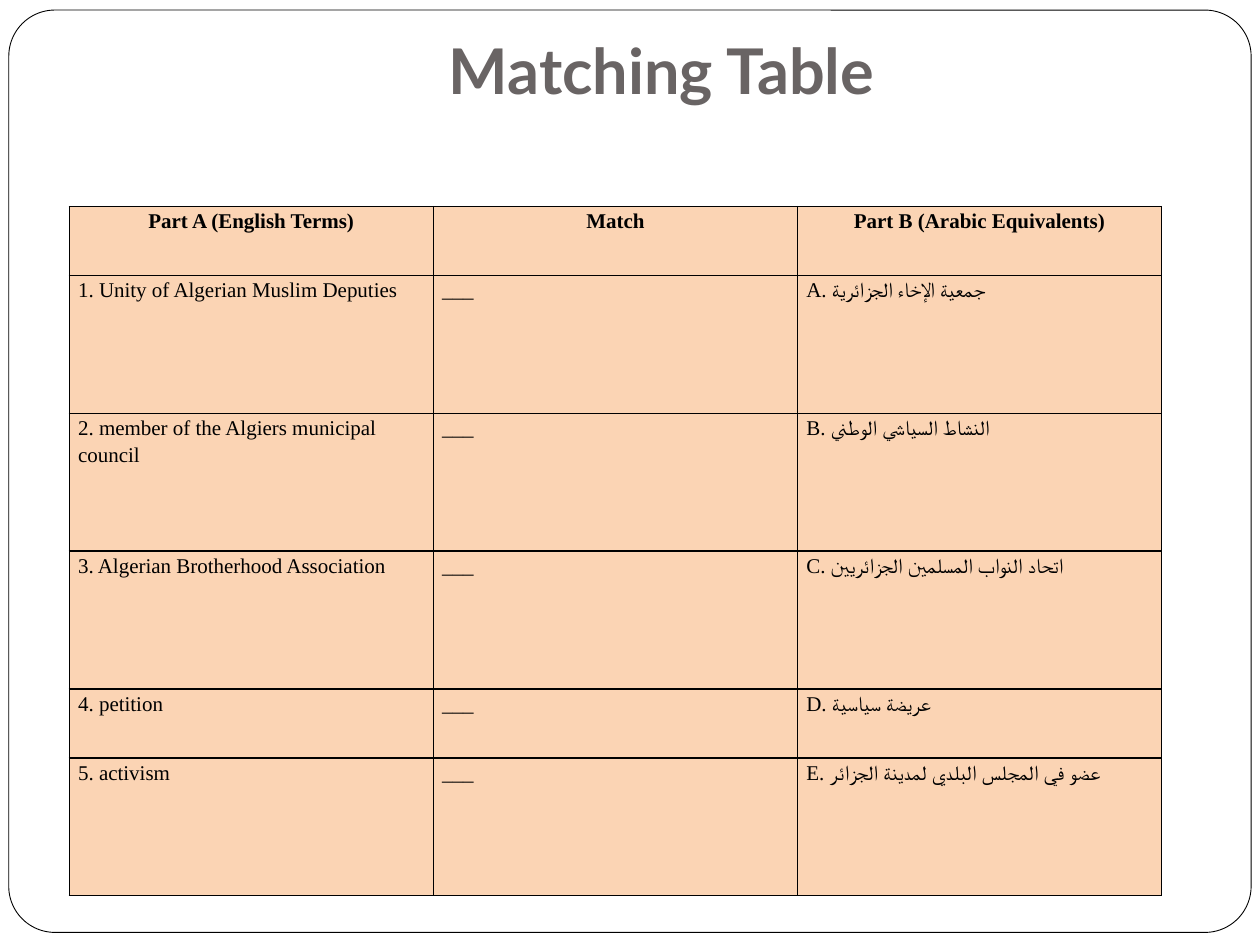
from dataclasses import dataclass

import pptx
import pptx.dml.color
import pptx.enum.shapes
import pptx.enum.text
import pptx.oxml
import pptx.oxml.ns
import pptx.util

RGBColor = pptx.dml.color.RGBColor
PP_ALIGN = pptx.enum.text.PP_ALIGN

BLACK = RGBColor(0x00, 0x00, 0x00)
WHITE = RGBColor(0xFF, 0xFF, 0xFF)
TITLE_GRAY = RGBColor(0x69, 0x64, 0x64)
PEACH = RGBColor(0xFB, 0xD4, 0xB4)

COLUMNS, ROWS = 100, 75
BLANK = "___"
HEADERS = ("Part A (English Terms)", "Match", "Part B (Arabic Equivalents)")


@dataclass(frozen=True)
class Box:
    """A place on the slide, in grid columns and rows."""
    left: float
    top: float
    width: float
    height: float


@dataclass(frozen=True)
class Pair:
    """One table row; units is its height in shares of the table."""
    english: str
    arabic: str
    units: int


FRAME = Box(0.7, 0.8, 98.6, 73.2)
TITLE = Box(10, 3, 85, 12.5)
TABLE = Box(5.5, 16.4, 86.7, 54.7)
HEADER_UNITS = 1
PAIRS = (
    Pair("1. Unity of Algerian Muslim Deputies", "A. جمعية الإخاء الجزائرية", 2),
    Pair("2. member of the Algiers municipal council", "B. النشاط السياسي الوطني", 2),
    Pair("3. Algerian Brotherhood Association", "C. اتحاد النواب المسلمين الجزائريين", 2),
    Pair("4. petition", "D. عريضة سياسية", 1),
    Pair("5. activism", "E. عضو في المجلس البلدي لمدينة الجزائر", 2),
)

prs = pptx.Presentation()
prs.slide_width = pptx.util.Inches(10)
prs.slide_height = pptx.util.Inches(7.5)


def place(box: Box) -> tuple[int, int, int, int]:
    """Turn grid units into left, top, width and height."""
    col, row = prs.slide_width / COLUMNS, prs.slide_height / ROWS
    return (round(box.left * col), round(box.top * row),
            round(box.width * col), round(box.height * row))


def add_run(p, text: str, font: str, size: float, color: RGBColor, bold: bool) -> None:
    r = p.add_run()
    r.text = text
    r.font.name = font
    r.font.size = pptx.util.Pt(size)
    r.font.bold = bold
    r.font.color.rgb = color


def add_frame(s) -> None:
    sp = s.shapes.add_shape(
        pptx.enum.shapes.MSO_SHAPE.ROUNDED_RECTANGLE, *place(FRAME))
    sp.adjustments[0] = 0.05
    sp.shadow.inherit = False
    sp.fill.solid()
    sp.fill.fore_color.rgb = WHITE
    sp.line.color.rgb = BLACK
    sp.line.width = pptx.util.Pt(0.5)
    s.shapes._spTree.insert(2, sp._element)  # behind the title


def add_title(s) -> None:
    sp = s.shapes.title
    sp.left, sp.top, sp.width, sp.height = place(TITLE)
    tf = sp.text_frame
    tf.word_wrap = True
    tf.auto_size = pptx.enum.text.MSO_AUTO_SIZE.NONE
    tf.vertical_anchor = pptx.enum.text.MSO_ANCHOR.BOTTOM
    tf.margin_left = tf.margin_right = pptx.util.Inches(0.1)
    tf.margin_top = pptx.util.Inches(0.05)
    tf.margin_bottom = pptx.util.Inches(0.7)
    p = tf.paragraphs[0]
    p.alignment = PP_ALIGN.CENTER
    add_run(p, "Matching Table", "Lato", 36, TITLE_GRAY, True)


def add_borders(cell) -> None:
    tc_pr = cell._tc.get_or_add_tcPr()
    for side in ("lnL", "lnR", "lnT", "lnB"):
        tc_pr.append(pptx.oxml.parse_xml(
            f'<a:{side} {pptx.oxml.ns.nsdecls("a")} w="{pptx.util.Pt(1)}">'
            f'<a:solidFill><a:srgbClr val="{BLACK}"/></a:solidFill></a:{side}>'))


def fill_cell(cell, text: str, header: bool) -> None:
    add_borders(cell)
    cell.fill.solid()
    cell.fill.fore_color.rgb = PEACH
    cell.margin_left = cell.margin_right = pptx.util.Inches(0.07)
    cell.margin_top = cell.margin_bottom = 0
    p = cell.text_frame.paragraphs[0]
    p.alignment = PP_ALIGN.CENTER if header else PP_ALIGN.LEFT
    p.line_spacing = 1.15
    add_run(p, text, "Times New Roman", 12, BLACK, header)


def add_matching_table(s) -> None:
    lines = [HEADERS] + [(pair.english, BLANK, pair.arabic) for pair in PAIRS]
    units = [HEADER_UNITS] + [pair.units for pair in PAIRS]
    left, top, width, height = place(TABLE)
    table = s.shapes.add_table(
        len(lines), len(HEADERS), left, top, width, height).table
    table.first_row = table.horz_banding = False
    for column in table.columns:
        column.width = width // len(HEADERS)
    for i, (texts, share) in enumerate(zip(lines, units)):
        table.rows[i].height = height * share // sum(units)
        for j, text in enumerate(texts):
            fill_cell(table.cell(i, j), text, header=i == 0)


def main() -> None:
    s = prs.slides.add_slide(prs.slide_layouts.get_by_name("Title Only"))
    add_frame(s)
    add_title(s)
    add_matching_table(s)
    prs.save("out.pptx")


if __name__ == "__main__":
    main()
